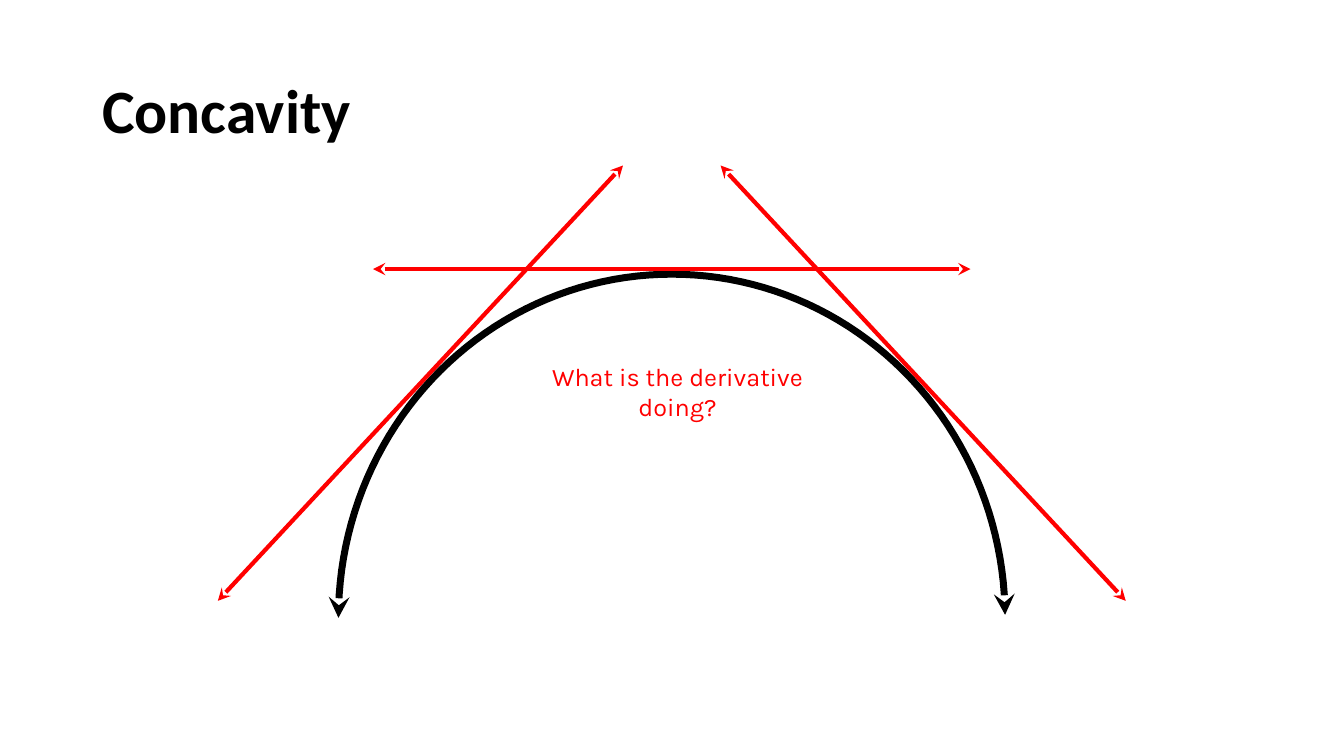
from dataclasses import dataclass
from math import cos, radians, sin

from lxml.etree import SubElement
from pptx import Presentation
from pptx.dml.color import RGBColor
from pptx.enum.shapes import MSO_CONNECTOR as Connector
from pptx.enum.text import MSO_ANCHOR as Anchor, PP_ALIGN as Align
from pptx.oxml.ns import qn
from pptx.util import Cm, Pt


@dataclass(frozen=True)
class Theme:
    ink: RGBColor = RGBColor(0x00, 0x00, 0x00)
    accent: RGBColor = RGBColor(0xFF, 0x00, 0x00)
    title_font: str = "Calibri"
    question_font: str = "Karla"
    title_size: Pt = Pt(44)
    question_size: Pt = Pt(18)
    curve_width: Pt = Pt(5)
    tangent_width: Pt = Pt(3)


theme = Theme()


def style_arrow(shape, color, width):
    """Colour the line, put stealth heads on both ends and drop the shadow."""
    shape.line.color.rgb = color
    shape.line.width = width
    properties = shape._element.spPr
    outline = properties.find(qn("a:ln"))
    for end in ("a:headEnd", "a:tailEnd"):
        SubElement(outline, qn(end), type="stealth")
    if properties.find(qn("a:effectLst")) is None:
        SubElement(properties, qn("a:effectLst"))


def add_text(box, text, font, size, color):
    frame = slide.shapes.add_textbox(*map(Cm, box)).text_frame
    frame.word_wrap = True
    paragraph = frame.paragraphs[0]
    run = paragraph.add_run()
    run.text = text
    run.font.name = font
    run.font.size = size
    run.font.color.rgb = color
    return frame, paragraph, run


presentation = Presentation()
presentation.slide_width = Cm(33.87)
presentation.slide_height = Cm(19.05)
slide = presentation.slides.add_slide(presentation.slide_layouts[6])

title_frame, title_line, title = add_text(
    (2.33, 1.02, 29.21, 3.68), "Concavity",
    theme.title_font, theme.title_size, theme.ink)
title_frame.vertical_anchor = Anchor.MIDDLE
title_line.line_spacing = 0.9
title.font.bold = True

# Concave-down curve: the upper half of an ellipse, drawn from right to left
center_x, center_y = 16.93, 15.57
radius_x, radius_y = 8.4, 8.66
arc = [(Cm(center_x + radius_x * cos(radians(angle))),
        Cm(center_y - radius_y * sin(radians(angle))))
       for angle in (0.5, *range(2, 181, 2))]
builder = slide.shapes.build_freeform(*arc[0])
builder.add_line_segments(arc[1:], close=False)
curve = builder.convert_to_shape()
curve.fill.background()
curve.shadow.inherit = False
style_arrow(curve, theme.ink, theme.curve_width)

# Tangents as offsets from the axis of the curve: rising, falling and level
tangents = [
    (-11.44, 15.14, -1.23, 4.17),
    (11.44, 15.14, 1.23, 4.17),
    (-7.53, 6.78, 7.53, 6.78),
]
for start_x, start_y, end_x, end_y in tangents:
    tangent = slide.shapes.add_connector(
        Connector.STRAIGHT,
        Cm(center_x + start_x), Cm(start_y), Cm(center_x + end_x), Cm(end_y))
    style_arrow(tangent, theme.accent, theme.tangent_width)

_, question_line, _ = add_text(
    (12.73, 8.97, 8.69, 1.02), "What is the derivative doing?",
    theme.question_font, theme.question_size, theme.accent)
question_line.alignment = Align.CENTER

presentation.save("out.pptx")
